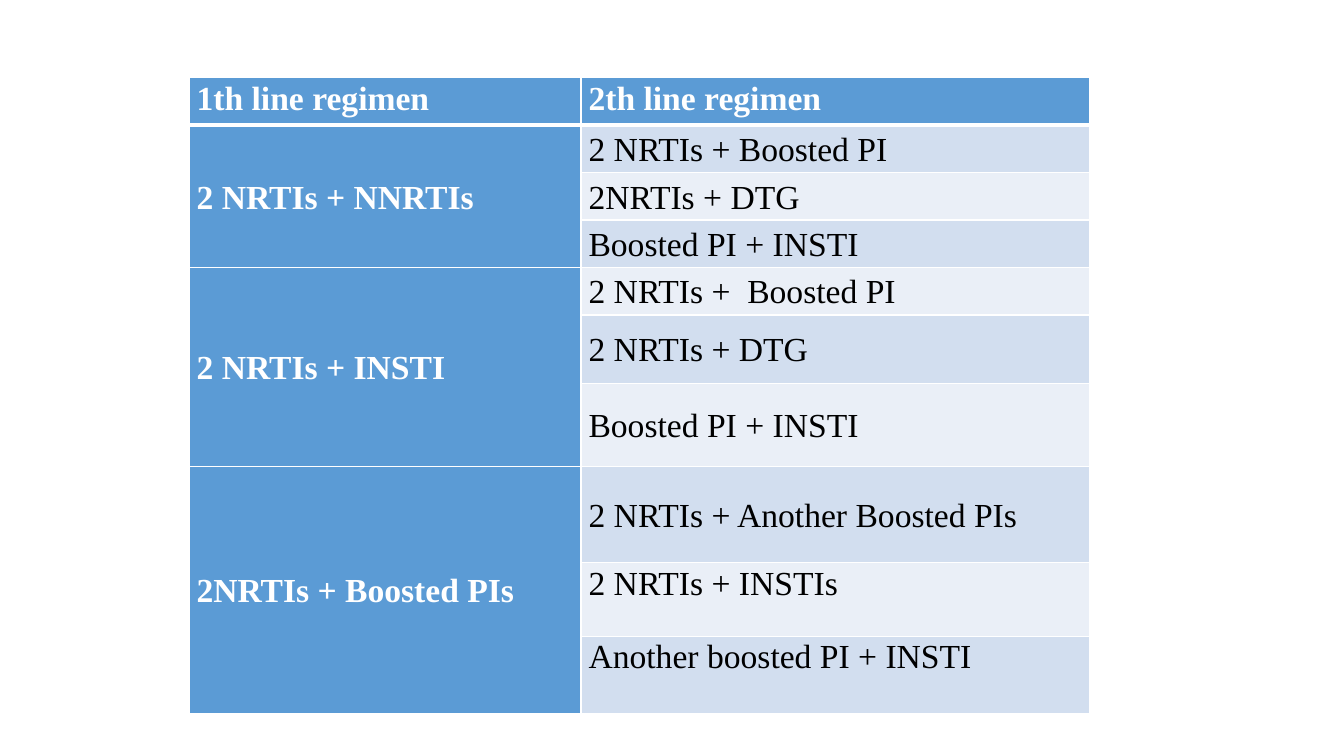
"""Build a slide with a table of first and second line regimens."""
from lxml import etree
from pptx import Presentation
from pptx import util as u
from pptx.dml.color import RGBColor
from pptx.enum import text
from pptx.oxml import ns

COLORS = {
    "heading": "5B9BD5",
    "odd": "D2DEEF",
    "even": "EAEFF7",
    "border": "FFFFFF",
    "light_text": "FFFFFF",
    "dark_text": "000000",
}
HEADINGS = ("1th line regimen", "2th line regimen")
REGIMENS = {
    "2 NRTIs + NNRTIs": ("2 NRTIs + Boosted PI", "2NRTIs + DTG", "Boosted PI + INSTI"),
    "2 NRTIs + INSTI": ("2 NRTIs +  Boosted PI", "2 NRTIs + DTG", "Boosted PI + INSTI"),
    "2NRTIs + Boosted PIs": (
        "2 NRTIs + Another Boosted PIs",
        "2 NRTIs + INSTIs",
        "Another boosted PI + INSTI",
    ),
}
COLUMN_WIDTHS = (280, 363.6)
ROW_HEIGHTS = (33.9,) * 5 + (49, 59, 69, 52.6, 55.2)
TOP_ANCHORED_ROWS = (0, 8, 9)


def add_borders(cell, row):
    """Draw the cell's edges, heavier along the line below the header."""
    properties = cell._tc.get_or_add_tcPr()
    widths = {"lnL": 1, "lnR": 1, "lnT": 3 if row == 1 else 1, "lnB": 3 if row == 0 else 1}
    for edge, width in widths.items():
        line = etree.SubElement(properties, ns.qn(f"a:{edge}"), w=str(u.Pt(width)))
        fill = etree.SubElement(line, ns.qn("a:solidFill"))
        etree.SubElement(fill, ns.qn("a:srgbClr"), val=COLORS["border"])


def style_cell(cell, row, is_heading):
    """Set the borders, fill, margins and anchor of a cell."""
    add_borders(cell, row)
    band = "heading" if is_heading else "odd" if row % 2 else "even"
    cell.fill.solid()
    cell.fill.fore_color.rgb = RGBColor.from_string(COLORS[band])
    cell.margin_left = cell.margin_right = u.Pt(5.4)
    cell.margin_top = cell.margin_bottom = 0
    top = row in TOP_ANCHORED_ROWS
    cell.vertical_anchor = text.MSO_ANCHOR.TOP if top else text.MSO_ANCHOR.MIDDLE


def write_cell(cell, wording, is_heading):
    """Write a regimen or heading into a cell."""
    cell.text = wording
    paragraph = cell.text_frame.paragraphs[0]
    paragraph.line_spacing = 1.07
    paragraph.space_after = u.Pt(8)
    font = paragraph.font
    font.name = "Times New Roman"
    font.size = u.Pt(24)
    font.bold = is_heading
    font.color.rgb = RGBColor.from_string(COLORS["light_text" if is_heading else "dark_text"])


def add_regimen_table(slide):
    """Place the empty styled table on the slide."""
    table = slide.shapes.add_table(
        len(ROW_HEIGHTS), len(COLUMN_WIDTHS), u.Pt(135), u.Pt(55.6),
        u.Pt(sum(COLUMN_WIDTHS)), u.Pt(sum(ROW_HEIGHTS)),
    ).table
    table.horz_banding = False
    for column, width in zip(table.columns, COLUMN_WIDTHS):
        column.width = u.Pt(width)
    for row, height in enumerate(ROW_HEIGHTS):
        table.rows[row].height = u.Pt(height)
        for column in range(len(COLUMN_WIDTHS)):
            style_cell(table.cell(row, column), row, row == 0 or column == 0)
    return table


def fill_regimens(table):
    """Write the headings and each first line regimen beside its options."""
    for column, heading in enumerate(HEADINGS):
        write_cell(table.cell(0, column), heading, True)
    row = 1
    for first_line, second_lines in REGIMENS.items():
        first_cell = table.cell(row, 0)
        first_cell.merge(table.cell(row + len(second_lines) - 1, 0))
        write_cell(first_cell, first_line, True)
        for second_line in second_lines:
            write_cell(table.cell(row, 1), second_line, False)
            row += 1


def main():
    """Create and save the presentation."""
    presentation = Presentation()
    presentation.slide_width = u.Pt(960)
    presentation.slide_height = u.Pt(540)
    slide = presentation.slides.add_slide(presentation.slide_layouts[6])
    fill_regimens(add_regimen_table(slide))
    presentation.save("out.pptx")


if __name__ == "__main__":
    main()
